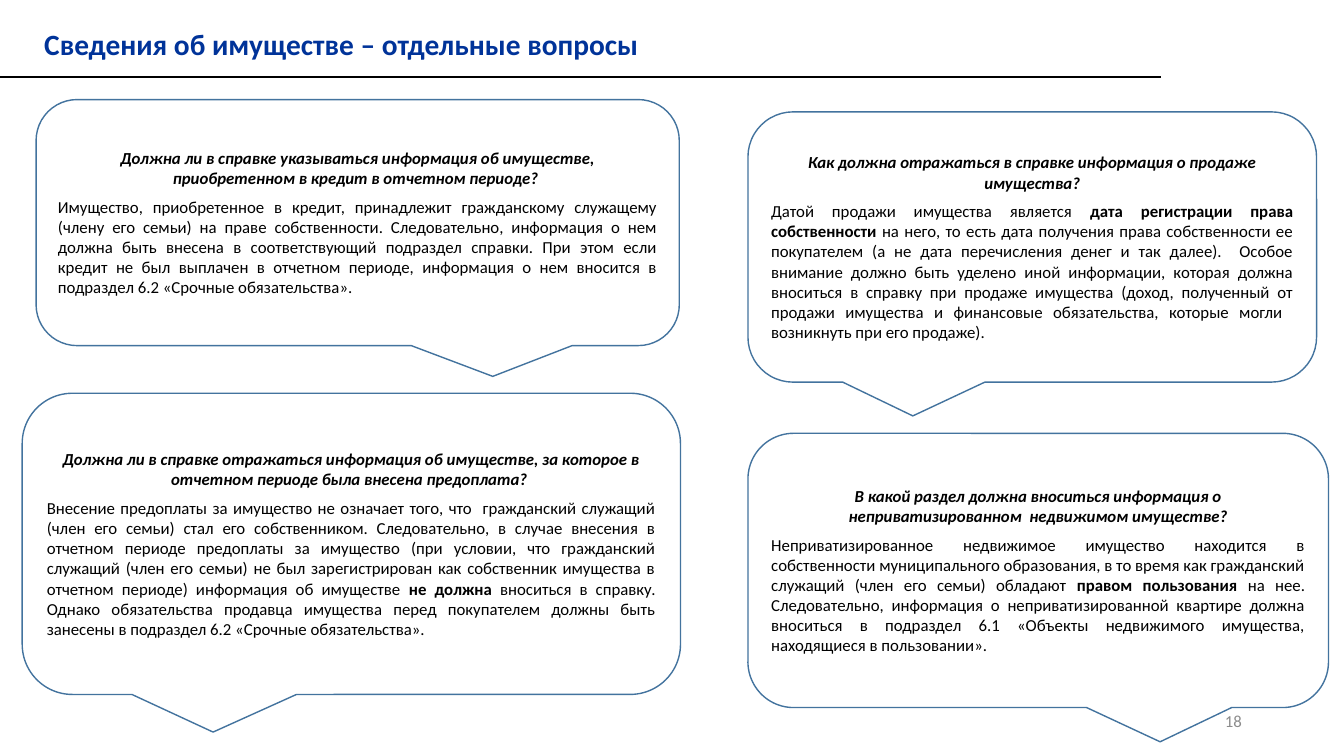
from pptx import Presentation
from pptx.dml.color import RGBColor
from pptx.enum.shapes import MSO_CONNECTOR, MSO_SHAPE
from pptx.enum.text import MSO_ANCHOR, MSO_AUTO_SIZE, PP_ALIGN
from pptx.oxml.ns import qn
from pptx.util import Cm, Pt
from lxml import etree

CALLOUT = MSO_SHAPE.ROUNDED_RECTANGULAR_CALLOUT
STRAIGHT = MSO_CONNECTOR.STRAIGHT
MIDDLE = MSO_ANCHOR.MIDDLE
FIXED = MSO_AUTO_SIZE.NONE
LEFT, CENTER, RIGHT, JUSTIFY = PP_ALIGN.LEFT, PP_ALIGN.CENTER, PP_ALIGN.RIGHT, PP_ALIGN.JUSTIFY

FONT = "Calibri"
BLACK, NAVY, OUTLINE, GREY = "000000", "003399", "43739E", "8C8C8C"
TAIL_LEFT, TAIL_RIGHT = -0.21, 0.21

QUESTIONS = [
    ((0.91, 2.51, 16.21, 6.2), TAIL_RIGHT,
     "Должна ли в справке указываться информация об имуществе, приобретенном в кредит в отчетном периоде? ",
     "Имущество, приобретенное в кредит, принадлежит гражданскому служащему (члену его семьи) "
     "на праве собственности. Следовательно, информация о нем должна быть внесена в соответствующий "
     "подраздел справки. При этом если кредит не был выплачен в отчетном периоде, информация о нем "
     "вносится в подраздел 6.2 «Срочные обязательства»."),
    ((0.56, 9.91, 16.59, 7.59), TAIL_LEFT,
     "Должна ли в справке отражаться информация об имуществе, за которое в отчетном периоде "
     "была внесена предоплата? ",
     "Внесение предоплаты за имущество не означает того, что  гражданский служащий (член его семьи) "
     "стал его собственником. Следовательно, в случае внесения в отчетном периоде предоплаты за имущество "
     "(при условии, что гражданский служащий (член его семьи) не был зарегистрирован как собственник "
     "имущества в отчетном периоде) информация об имуществе **не должна** вноситься в справку. "
     "Однако обязательства продавца имущества перед покупателем должны быть занесены в подраздел 6.2 "
     "«Срочные обязательства»."),
    ((18.85, 10.92, 14.63, 6.91), TAIL_RIGHT,
     "В какой раздел должна вноситься информация о неприватизированном  недвижимом имуществе?",
     "Неприватизированное недвижимое имущество находится в собственности муниципального образования, "
     "в то время как гражданский служащий (член его семьи) обладают **правом пользования** на нее. "
     "Следовательно, информация о неприватизированной квартире должна вноситься в подраздел 6.1 "
     "«Объекты недвижимого имущества, находящиеся в пользовании». "),
    ((18.85, 2.82, 14.33, 6.81), TAIL_LEFT,
     "Как должна отражаться в справке информация о продаже имущества?",
     "Датой продажи имущества является **дата регистрации права собственности** на него, то есть дата "
     "получения права собственности ее покупателем (а не дата перечисления денег и так далее).  "
     "Особое внимание должно быть уделено иной информации, которая должна вноситься в справку при продаже "
     "имущества (доход, полученный от продажи имущества и финансовые обязательства, которые могли  "
     "возникнуть при его продаже). "),
]


def rgb(value):
    return RGBColor.from_string(value)


def write(paragraph, text, size=12, color=BLACK, bold=False, italic=False, align=LEFT, after=0):
    paragraph.alignment = align
    paragraph.space_before = Pt(0)
    paragraph.space_after = Pt(after)
    for index, part in enumerate(text.split("**")):
        run = paragraph.add_run()
        run.text = part
        run.font.name = FONT
        run.font.size = Pt(size)
        run.font.bold = bold or index % 2 == 1
        run.font.italic = italic
        run.font.color.rgb = rgb(color)


def add_page_number(slide, box, number):
    page_number = slide.shapes.add_textbox(*map(Cm, box)).text_frame
    page_number.word_wrap = True
    page_number.vertical_anchor = MIDDLE
    write(page_number.paragraphs[0], number, color=GREY, align=RIGHT)


def add_heading(slide, box, text, rule_length):
    left, top, width, height = box
    heading = slide.shapes.title
    heading.left, heading.top, heading.width, heading.height = map(Cm, box)
    heading.text_frame.word_wrap = False
    heading.text_frame.auto_size = FIXED
    heading.text_frame.vertical_anchor = MIDDLE
    write(heading.text_frame.paragraphs[0], text, size=21, color=NAVY, bold=True)

    rule_top = Cm(top + height + 0.26)
    rule = slide.shapes.add_connector(STRAIGHT, 0, rule_top, Cm(rule_length), rule_top)
    rule.line.color.rgb = rgb(BLACK)
    rule.line.width = Pt(1.5)
    etree.SubElement(rule.element.spPr, qn("a:effectLst"))


def add_question(slide, box, tail, question, answer):
    callout = slide.shapes.add_shape(CALLOUT, *map(Cm, box))
    callout.adjustments[0] = tail
    callout.shadow.inherit = False
    callout.fill.background()
    callout.line.color.rgb = rgb(OUTLINE)
    callout.line.width = Pt(1)
    frame = callout.text_frame
    frame.word_wrap = True
    frame.vertical_anchor = MIDDLE
    write(frame.paragraphs[0], question, bold=True, italic=True, align=CENTER, after=6)
    write(frame.add_paragraph(), answer, align=JUSTIFY)


def main():
    deck = Presentation()
    deck.slide_width, deck.slide_height = Cm(33.87), Cm(19.05)
    slide = deck.slides.add_slide(deck.slide_layouts[5])
    add_page_number(slide, (23.93, 17.65, 7.62, 1.02), "18")
    add_heading(slide, (0.86, 0.53, 15.65, 1.14), "Сведения об имуществе – отдельные вопросы", 29.26)
    for box, tail, question, answer in QUESTIONS:
        add_question(slide, box, tail, question, answer)
    deck.save("out.pptx")


if __name__ == "__main__":
    main()
